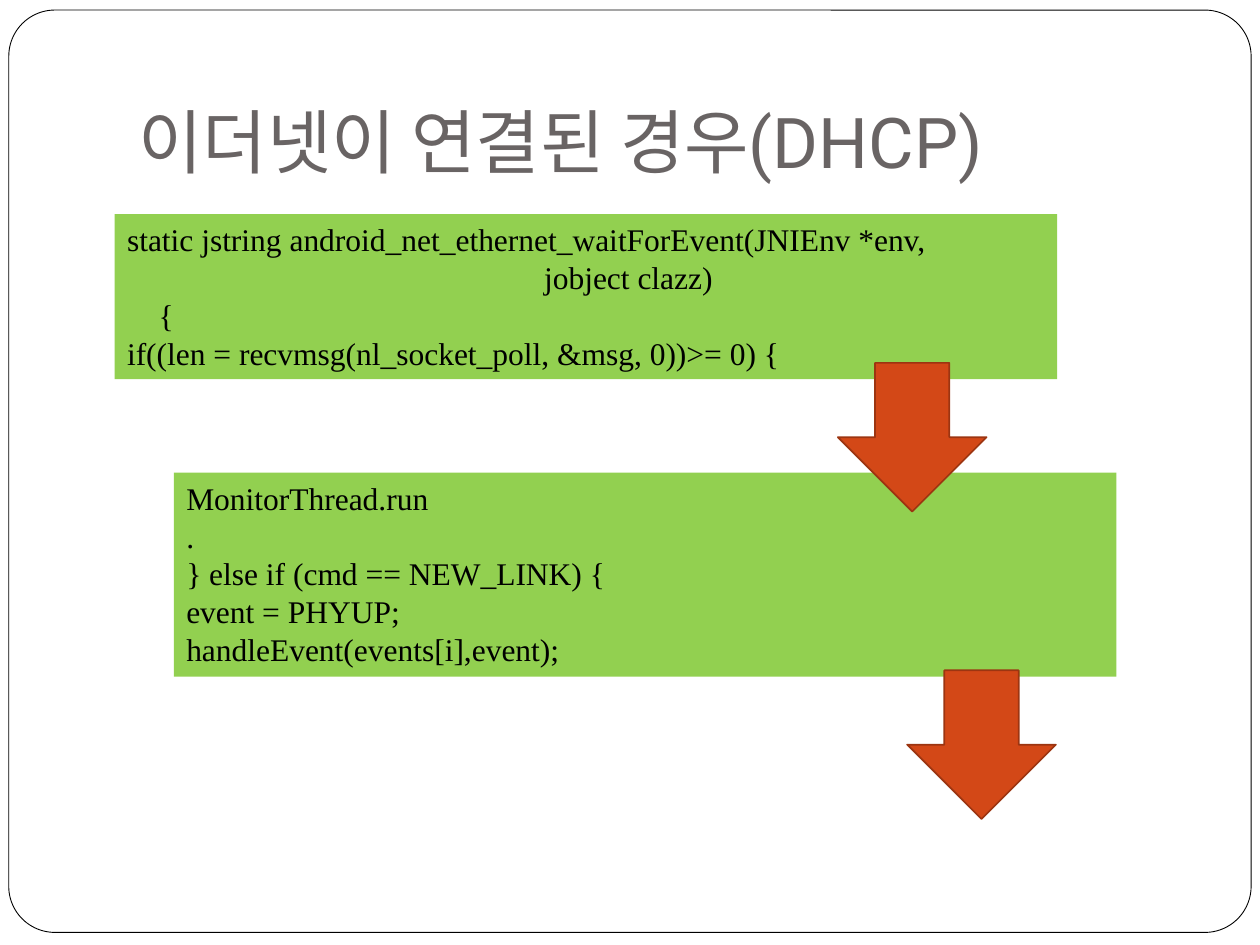
from dataclasses import dataclass

from pptx import Presentation
from pptx.dml.color import RGBColor
from pptx.enum.shapes import MSO_SHAPE as SHAPE
from pptx.enum.text import MSO_ANCHOR as ANCHOR, MSO_AUTO_SIZE as AUTO_SIZE, PP_ALIGN as ALIGN
from pptx.util import Inches, Pt


@dataclass(frozen=True)
class Theme:
    paper: str = "FFFFFF"
    ink: str = "000000"
    title: str = "696464"
    code_fill: str = "92D050"
    arrow_fill: str = "D34817"
    arrow_line: str = "9C3511"
    title_font: str = "Roboto"
    code_font: str = "Times New Roman"
    title_size: int = 40
    code_size: int = 18


THEME = Theme()
TITLE = "이더넷이 연결된 경우(DHCP)"

# Each code line is (text, indent in inches).
WAIT_CODE = [
    ("static jstring android_net_ethernet_waitForEvent(JNIEnv *env,", 0),
    ("jobject clazz)", 3.31),
    ("{", 0.25),
    ("if((len = recvmsg(nl_socket_poll, &msg, 0))>= 0) {", 0),
]
MONITOR_CODE = [
    ("MonitorThread.run", 0),
    (".", 0),
    ("} else if (cmd == NEW_LINK) {", 0),
    ("event = PHYUP;", 0),
    ("handleEvent(events[i],event);", 0),
]


def inches(box):
    return [Inches(v) for v in box]


def style_runs(p, font, size, color):
    for r in p.runs:
        r.font.name = font
        r.font.size = Pt(size)
        r.font.color.rgb = RGBColor.from_string(color)


def add_block(slide, kind, box, fill, line=None, width=1):
    """Add a flat preset shape, outlined only when a line colour is given."""
    sp = slide.shapes.add_shape(kind, *inches(box))
    sp.shadow.inherit = False
    sp.fill.solid()
    sp.fill.fore_color.rgb = RGBColor.from_string(fill)
    if line:
        sp.line.color.rgb = RGBColor.from_string(line)
        sp.line.width = Pt(width)
    else:
        sp.line.fill.background()
    return sp


def add_frame(slide, box):
    """Add the rounded page border behind everything else."""
    sp = add_block(slide, SHAPE.ROUNDED_RECTANGLE, box, THEME.paper, THEME.ink, 0.5)
    sp.adjustments[0] = 0.05
    slide.shapes._spTree.insert(2, sp._element)


def set_title(slide, box, text):
    sp = slide.shapes.title
    sp.left, sp.top, sp.width, sp.height = inches(box)
    tf = sp.text_frame
    tf.text = text
    tf.word_wrap = True
    tf.auto_size = AUTO_SIZE.NONE
    tf.vertical_anchor = ANCHOR.BOTTOM
    tf.margin_bottom = Inches(0.1)
    p = tf.paragraphs[0]
    p.alignment = ALIGN.LEFT
    style_runs(p, THEME.title_font, THEME.title_size, THEME.title)


def add_code(slide, box, lines):
    tf = add_block(slide, SHAPE.RECTANGLE, box, THEME.code_fill).text_frame
    tf.word_wrap = True
    tf.vertical_anchor = ANCHOR.TOP
    tf.text = "\n".join(text for text, _ in lines)
    for p, (_, indent) in zip(tf.paragraphs, lines):
        p.alignment = ALIGN.LEFT
        p._p.get_or_add_pPr().set("marL", str(Inches(indent)))
        style_runs(p, THEME.code_font, THEME.code_size, THEME.ink)


def add_arrow(slide, box):
    add_block(slide, SHAPE.DOWN_ARROW, box, THEME.arrow_fill, THEME.arrow_line)


def main():
    prs = Presentation()
    prs.slide_width, prs.slide_height = Inches(10), Inches(7.5)
    slide = prs.slides.add_slide(prs.slide_layouts[5])
    add_frame(slide, (0.07, 0.08, 9.86, 7.32))
    set_title(slide, (1, 0.3, 8.5, 1.25), TITLE)
    add_code(slide, (0.91, 1.7, 7.48, 1.31), WAIT_CODE)
    add_code(slide, (1.38, 3.75, 7.48, 1.62), MONITOR_CODE)
    for left, top in ((6.65, 2.88), (7.2, 5.32)):
        add_arrow(slide, (left, top, 1.18, 1.18))
    prs.save("out.pptx")


if __name__ == "__main__":
    main()
